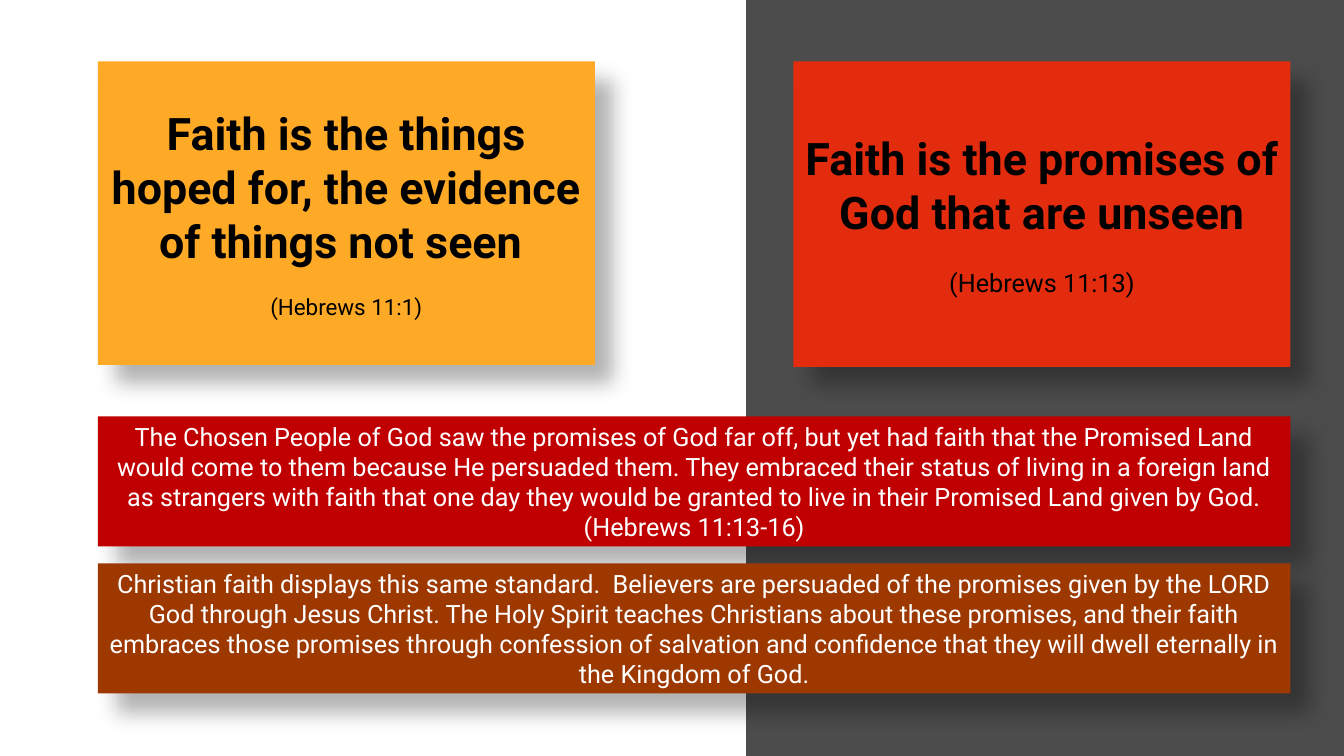
from lxml import etree
from pptx import Presentation
from pptx.dml.color import RGBColor
from pptx.enum.shapes import MSO_SHAPE as Shape
from pptx.enum.text import MSO_ANCHOR as Anchor, PP_ALIGN as Align
from pptx.oxml.ns import qn
from pptx.util import Inches, Pt

FONT = "Roboto"
BLACK = RGBColor(0x00, 0x00, 0x00)
WHITE = RGBColor(0xFF, 0xFF, 0xFF)
AMBER = RGBColor(0xFF, 0xAA, 0x27)
RED = RGBColor(0xE3, 0x2C, 0x0D)
CRIMSON = RGBColor(0xC0, 0x00, 0x00)
BROWN = RGBColor(0x9D, 0x39, 0x00)

# left, height, fill, saying, verse, verse size
CARDS = [
    (0.97, 3.01, AMBER,
     "Faith is the things hoped for, the evidence of things not seen ",
     "(Hebrews 11:1)", 16),
    (7.87, 3.03, RED,
     "Faith is the promises of God that are unseen",
     "(Hebrews 11:13)", 18),
]
BANDS = [
    (CRIMSON,
     "The Chosen People of God saw the promises of God far off, but yet had "
     "faith that the Promised Land would come to them because He persuaded "
     "them. They embraced their status of living in a foreign land as "
     "strangers with faith that one day they would be granted to live in "
     "their Promised Land given by God. (Hebrews 11:13-16)"),
    (BROWN,
     "Christian faith displays this same standard.  Believers are persuaded "
     "of the promises given by the LORD God through Jesus Christ. The Holy "
     "Spirit teaches Christians about these promises, and their faith "
     "embraces those promises through confession of salvation and confidence "
     "that they will dwell eternally in the Kingdom of God."),
]

WIDE, HIGH = 13.33, 7.5
PANEL_X = 7.4
CARD_Y, CARD_W = 0.61, 4.93
BAND_X, BAND_Y, BAND_W, BAND_H, BAND_STEP = 0.97, 4.13, 11.83, 1.29, 1.46
LINE = 1.17  # line height of the font, in ems


def add_alpha(color, percent):
    etree.SubElement(color, qn("a:alpha"), val=str(percent * 1000))


def add_box(slide, left, top, width, height, fill):
    box = slide.shapes.add_shape(Shape.RECTANGLE, Inches(left), Inches(top),
                                 Inches(width), Inches(height))
    box.shadow.inherit = False
    box.fill.solid()
    box.fill.fore_color.rgb = fill
    box.line.fill.background()
    return box


def cast_shadow(box):
    effects = box._element.spPr.find(qn("a:effectLst"))
    outer = etree.SubElement(
        effects, qn("a:outerShdw"), blurRad=str(Pt(15)), dist=str(Pt(18)),
        dir=str(45 * 60000), algn="tl", rotWithShape="0")
    add_alpha(etree.SubElement(outer, qn("a:srgbClr"), val=str(BLACK)), 30)


def write(box, lines, color):
    """Fill the box with centred lines of (text, size, bold, space before)."""
    frame = box.text_frame
    frame.word_wrap = True
    frame.vertical_anchor = Anchor.MIDDLE
    for i, (text, size, bold, gap) in enumerate(lines):
        para = frame.add_paragraph() if i else frame.paragraphs[0]
        para.alignment = Align.CENTER
        if gap:
            para.space_before = Pt(gap)
        run = para.add_run()
        run.text = text
        font = run.font
        font.name, font.size, font.bold = FONT, Pt(size), bold
        font.color.rgb = color


def main():
    deck = Presentation()
    deck.slide_width, deck.slide_height = Inches(WIDE), Inches(HIGH)
    slide = deck.slides.add_slide(deck.slide_layouts[6])

    panel = add_box(slide, PANEL_X, 0, WIDE - PANEL_X, HIGH, BLACK)
    add_alpha(panel._element.spPr.find(qn("a:solidFill"))[0], 70)

    for left, height, fill, saying, verse, size in CARDS:
        card = add_box(slide, left, CARD_Y, CARD_W, height, fill)
        cast_shadow(card)
        gap = round(size * LINE, 1)
        write(card, [(saying, 32, True, 0), (verse, size, False, gap)], BLACK)

    for i, (fill, text) in enumerate(BANDS):
        band = add_box(slide, BAND_X, BAND_Y + i * BAND_STEP,
                       BAND_W, BAND_H, fill)
        cast_shadow(band)
        write(band, [(text, 18, False, 0)], WHITE)

    deck.save("out.pptx")


if __name__ == "__main__":
    main()
